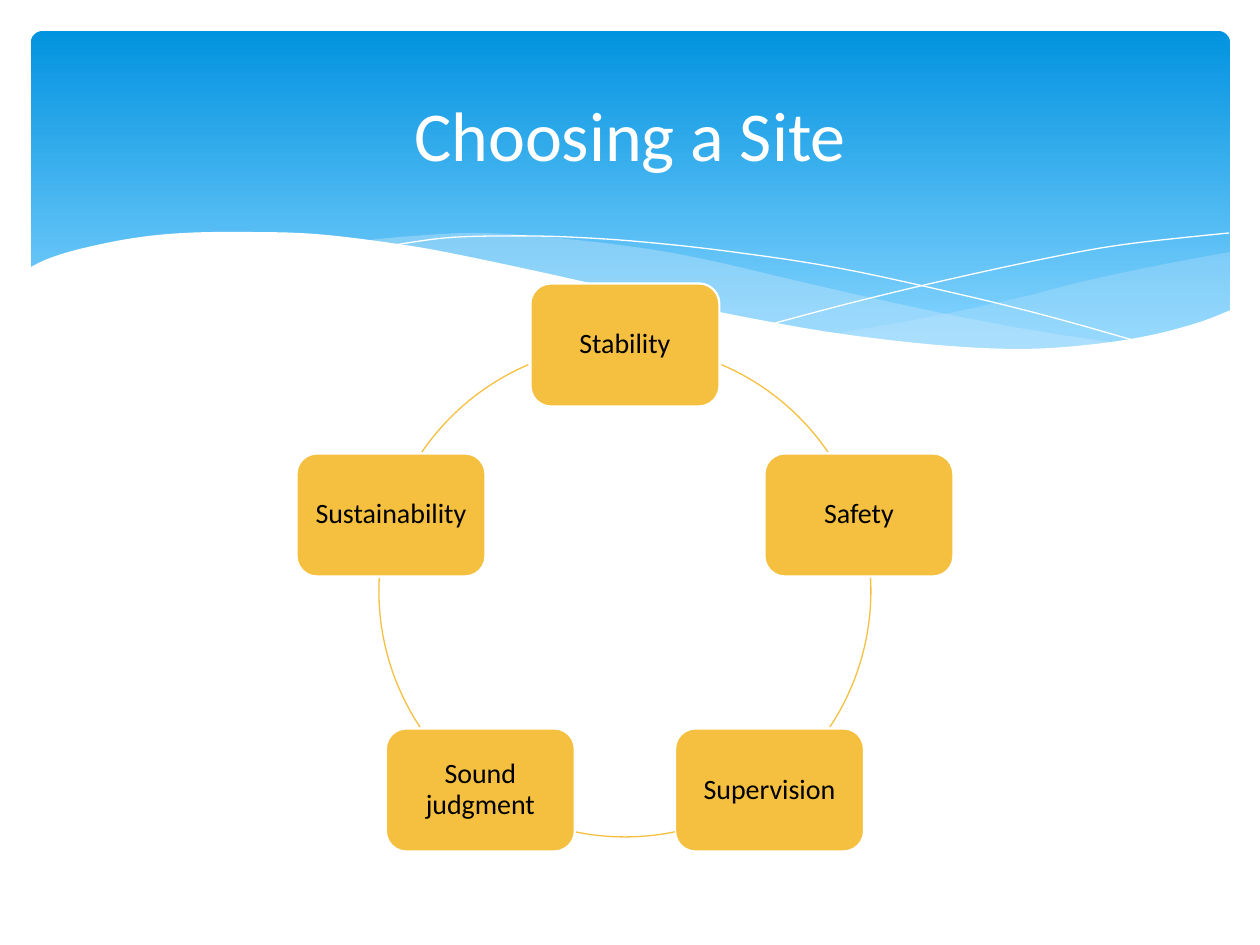
from math import cos, radians, sin

from lxml import etree
from pptx import Presentation, util as u
from pptx.dml.color import RGBColor
from pptx.enum import shapes, text
from pptx.oxml.ns import qn

PX = 914400 / 126


class Theme:
    font = "Calibri"
    title_size, label_size = u.Pt(40), u.Pt(16)
    white = RGBColor.from_string("FFFFFF")
    black = RGBColor.from_string("000000")
    sky_top = RGBColor.from_string("0293E0")
    sky_bottom = RGBColor.from_string("83D3FE")
    mist = RGBColor.from_string("C6E7FC")
    gold = RGBColor.from_string("F5C040")


def px(*lengths):
    return [u.Emu(round(length * PX)) for length in lengths]


def smooth(knots, steps=6):
    """Points of a Catmull-Rom curve through the knots."""
    ends = [knots[0], *knots, knots[-1]]
    points = []
    for a, b, c, d in zip(ends, ends[1:], ends[2:], ends[3:]):
        for step in range(steps):
            t = step / steps
            points.append(tuple(
                q + t * (r - p) / 2
                + t ** 2 * (2 * p - 5 * q + 4 * r - s) / 2
                + t ** 3 * (3 * q - p - 3 * r + s) / 2
                for p, q, r, s in zip(a, b, c, d)))
    return points + [knots[-1]]


deck = Presentation()
deck.slide_width, deck.slide_height = px(1260, 945)
page = deck.slides.add_slide(deck.slide_layouts[6])

# Blue header panel
panel = page.shapes.add_shape(shapes.MSO_SHAPE.ROUNDED_RECTANGLE, *px(31, 31, 1199, 340))
panel.shadow.inherit = False
panel.adjustments[0] = 0.034
panel.line.fill.background()
panel.fill.gradient()
panel.fill.gradient_angle = 270
for stop, color, position in zip(panel.fill.gradient_stops,
                                 (Theme.sky_top, Theme.sky_bottom), (0, 0.9)):
    stop.color.rgb = color
    stop.position = position

# Waves, back to front: edges, fill colour (None for a hairline), opacity in percent
right_swell = [
    [(833, 334), (919, 319), (1014, 299), (1085, 281), (1160, 265), (1230, 252)],
    [(1230, 311), (1187, 326), (1130, 340), (1076, 348), (1012, 350), (939, 346),
     (888, 341), (833, 334)],
]
middle_swell = [
    [(360, 241), (413, 236), (479, 233), (557, 238), (648, 249), (717, 262),
     (793, 280), (890, 302), (976, 320), (1055, 334), (1125, 344)],
    [(1125, 344), (1080, 349), (1017, 350), (942, 348), (857, 338), (757, 321),
     (668, 302), (566, 280), (483, 261), (407, 247), (360, 241)],
]
falling_line = [
    [(389, 246), (445, 238), (505, 236), (567, 237), (643, 242), (733, 252),
     (838, 268), (958, 294), (1047, 316), (1143, 343)],
]
rising_line = [
    [(772, 324), (847, 304), (942, 281), (1053, 257), (1128, 244), (1229, 233)],
]
white_wave = [
    [(29, 268), (50, 258), (84, 248), (134, 238), (184, 233), (243, 232), (315, 234),
     (398, 244), (460, 255), (563, 277), (667, 301), (760, 320), (842, 334), (937, 345),
     (1019, 349), (1087, 345), (1147, 336), (1197, 323), (1231, 310)],
    [(1231, 415), (29, 415)],
]
waves = [
    (right_swell, Theme.mist, 29),
    (middle_swell, Theme.mist, 40),
    (falling_line, None, 100),
    (rising_line, None, 100),
    (white_wave, Theme.white, 100),
]
for edges, color, opacity in waves:
    outline = [px(*point) for edge in edges for point in smooth(edge)]
    builder = page.shapes.build_freeform(*outline[0])
    builder.add_line_segments(outline[1:], close=color is not None)
    wave = builder.convert_to_shape()
    wave.shadow.inherit = False
    if color is None:
        wave.fill.background()
        wave.line.color.rgb = Theme.white
        wave.line.width = u.Pt(0)
        continue
    wave.line.fill.background()
    wave.fill.solid()
    wave.fill.fore_color.rgb = color
    if opacity < 100:
        tint = wave.fill._xPr.find(".//" + qn("a:srgbClr"))
        etree.SubElement(tint, qn("a:alpha"), val=str(opacity * 1000))

# Title
title = page.shapes.add_textbox(*px(63, 47, 1134, 173))
title.text_frame.word_wrap = True
title.text_frame.vertical_anchor = text.MSO_ANCHOR.MIDDLE
para = title.text_frame.paragraphs[0]
para.text = "Choosing a Site"
para.alignment = text.PP_ALIGN.CENTER
para.font.name, para.font.size = Theme.font, Theme.title_size
para.font.color.rgb = Theme.white

# Cycle: boxes evenly spaced clockwise from the top, each followed by an arc in degrees
center_x, center_y, radius = 625, 591, 246
box_width, box_height = 189, 123
cycle = [
    ("Stability", 293.1, 325.6),
    ("Safety", 356.9, 33.6),
    ("Supervision", 78.3, 101.7),
    ("Sound judgment", 146.4, 183.1),
    ("Sustainability", 214.4, 246.9),
]
for index, (label, arc_start, arc_end) in enumerate(cycle):
    angle = radians(index * 360 / len(cycle) - 90)
    left = center_x + radius * cos(angle) - box_width / 2
    top = center_y + radius * sin(angle) - box_height / 2
    box = page.shapes.add_shape(shapes.MSO_SHAPE.ROUNDED_RECTANGLE,
                                *px(left, top, box_width, box_height))
    box.shadow.inherit = False
    box.fill.solid()
    box.fill.fore_color.rgb = Theme.gold
    box.line.color.rgb = Theme.white
    box.line.width = u.Pt(1.25)
    frame = box.text_frame
    frame.word_wrap = True
    frame.vertical_anchor = text.MSO_ANCHOR.MIDDLE
    frame.margin_left, frame.margin_right, frame.margin_top, frame.margin_bottom = px(9, 9, 9, 9)
    para = frame.paragraphs[0]
    para.text = label
    para.alignment = text.PP_ALIGN.CENTER
    para.line_spacing = 0.9
    para.font.name, para.font.size = Theme.font, Theme.label_size
    para.font.color.rgb = Theme.black

    arc = page.shapes.add_shape(shapes.MSO_SHAPE.ARC, *px(
        center_x - radius, center_y - radius, 2 * radius, 2 * radius))
    arc.shadow.inherit = False
    # An angle adjustment counts 60000ths of a degree, normalised by 100000
    arc.adjustments[0], arc.adjustments[1] = arc_start * 0.6, arc_end * 0.6
    arc.fill.background()
    arc.line.color.rgb = Theme.gold
    arc.line.width = u.Pt(0.75)

deck.save("out.pptx")
